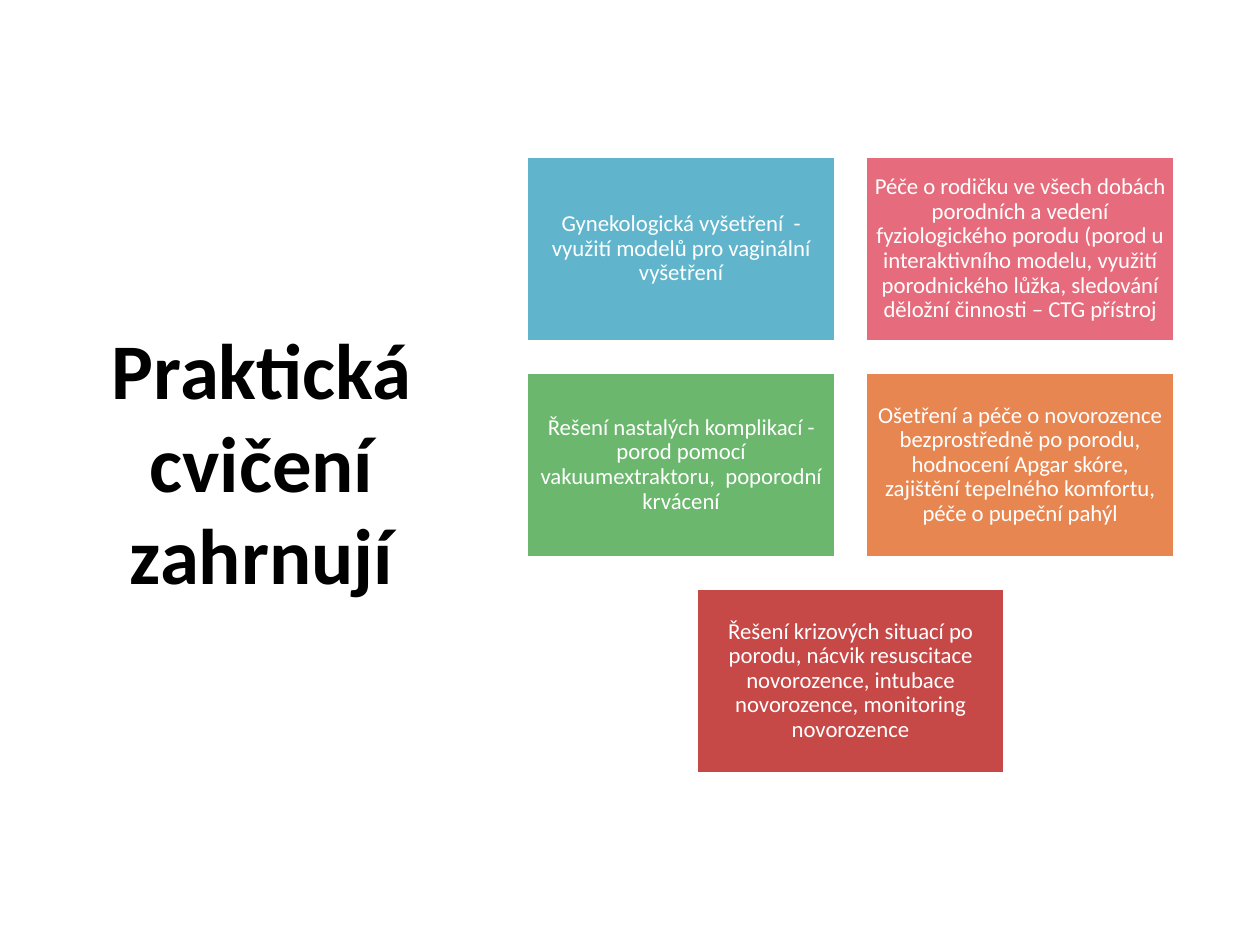
from pptx import Presentation
from pptx.dml.color import RGBColor
from pptx.enum.shapes import MSO_SHAPE as Shape
from pptx.enum.text import MSO_ANCHOR as Anchor, MSO_AUTO_SIZE as AutoSize, PP_ALIGN as Align
from pptx.util import Inches, Pt

FONT = "Calibri"
COLUMNS = 2
CARD_WIDTH, CARD_HEIGHT = 2.45, 1.47
PITCH_X, PITCH_Y = 2.69, 1.715

EXERCISES = [
    ("Gynekologická vyšetření  - využití modelů pro vaginální vyšetření", "60B5CC"),
    ("Péče o rodičku ve všech dobách porodních a vedení fyziologického porodu "
     "(porod u interaktivního modelu, využití porodnického lůžka, sledování "
     "děložní činnosti – CTG přístroj", "E66C7D"),
    ("Řešení nastalých komplikací - porod pomocí vakuumextraktoru,  poporodní krvácení",
     "6BB76D"),
    ("Ošetření a péče o novorozence bezprostředně po porodu, hodnocení Apgar skóre, "
     "zajištění tepelného komfortu, péče o pupeční pahýl", "E88651"),
    ("Řešení krizových situací po porodu, nácvik resuscitace novorozence, "
     "intubace novorozence, monitoring novorozence", "C64847"),
]


def color(hex_value):
    return RGBColor.from_string(hex_value)


def style_text(frame, size, hex_value, bold=False):
    frame.word_wrap = True
    frame.auto_size = AutoSize.NONE
    frame.vertical_anchor = Anchor.MIDDLE
    paragraph = frame.paragraphs[0]
    paragraph.alignment = Align.CENTER
    font = paragraph.font
    font.name, font.size, font.bold = FONT, Pt(size), bold
    font.color.rgb = color(hex_value)
    return paragraph


def place_title(slide, left, top, width, height):
    title = slide.shapes.title
    title.left, title.top = Inches(left), Inches(top)
    title.width, title.height = Inches(width), Inches(height)
    title.text_frame.text = "Praktická cvičení zahrnují"
    heading = style_text(title.text_frame, 45, "000000", bold=True)
    heading.line_spacing = 0.98


def place_card(slide, text, fill, left, top):
    card = slide.shapes.add_shape(Shape.RECTANGLE, Inches(left), Inches(top),
                                  Inches(CARD_WIDTH), Inches(CARD_HEIGHT))
    card.shadow.inherit = False
    card.fill.solid()
    card.fill.fore_color.rgb = color(fill)
    card.line.color.rgb = color("FFFFFF")
    card.line.width = Pt(2)
    frame = card.text_frame
    frame.margin_left = frame.margin_right = Inches(0.05)
    frame.margin_top = frame.margin_bottom = Inches(0.05)
    frame.text = text
    style_text(frame, 13, "FFFFFF").line_spacing = 0.9


def place_exercises(slide, left, top):
    for start in range(0, len(EXERCISES), COLUMNS):
        row = EXERCISES[start:start + COLUMNS]
        # A row that is not full is centred under the others
        indent = (COLUMNS - len(row)) * PITCH_X / 2
        for column, (text, fill) in enumerate(row):
            place_card(slide, text, fill, left + indent + column * PITCH_X,
                       top + start // COLUMNS * PITCH_Y)


def main():
    deck = Presentation()
    deck.slide_width, deck.slide_height = Inches(10), Inches(7.5)
    slide = deck.slides.add_slide(deck.slide_layouts[5])
    # Heading on the left, exercise cards on the right
    place_title(slide, 0.69, 0.64, 2.77, 6.09)
    place_exercises(slide, 4.18, 1.24)
    deck.save("out.pptx")


if __name__ == "__main__":
    main()
